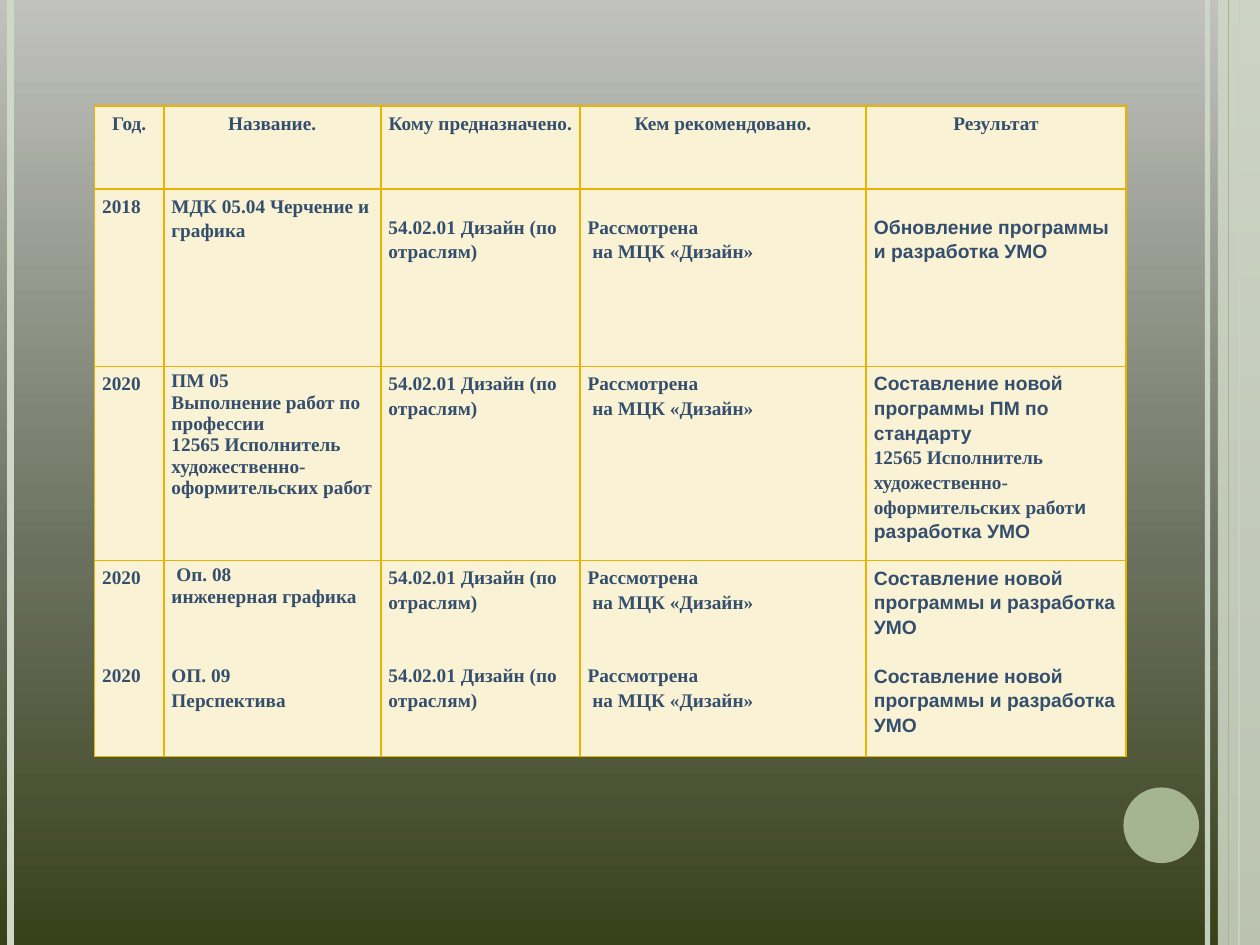
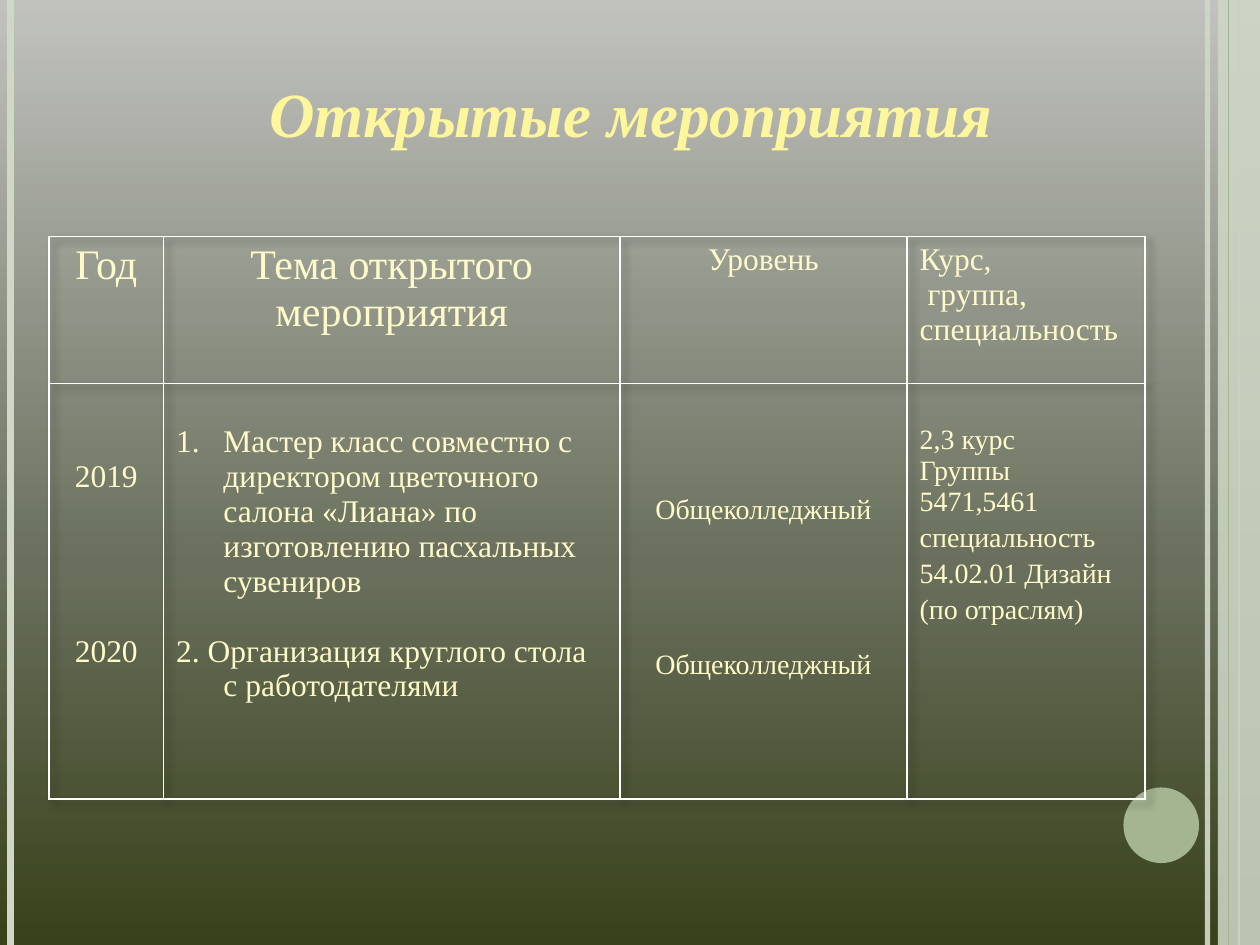
from dataclasses import dataclass, field
from typing import Optional

from lxml.etree import SubElement, fromstring
from pptx import Presentation
from pptx.dml.color import RGBColor
from pptx.enum.shapes import MSO_CONNECTOR, MSO_SHAPE
from pptx.enum.text import MSO_ANCHOR, PP_ALIGN
from pptx.oxml.ns import nsdecls, qn
from pptx.util import Pt


# Theme: colours, fonts and type sizes
@dataclass(frozen=True)
class Theme:
    serif: str = "Times New Roman"
    sans: str = "Arial"
    ramp: tuple = ((0, "38411A"), (40, "696F5C"), (100, "C1C2BE"))
    pale: str = "CFD7C7"
    sage: str = "A5B592"
    cream: str = "FAF2D4"
    gold: str = "E9B400"
    navy: str = "344E6D"
    white: str = "FFFFFF"
    lemon: str = "FDF69C"
    ivory: str = "FEFAC9"
    title: int = 36
    large: int = 24
    body: int = 18
    small: int = 16
    note: int = 11


THEME = Theme()
WIDE, HIGH = 720, 540
LOOSE = 1.15


# Text and table parts
@dataclass(frozen=True)
class Run:
    text: str
    font: str = THEME.serif
    size: int = THEME.note
    color: str = THEME.navy
    bold: bool = False
    slant: bool = False


@dataclass(frozen=True)
class Para:
    runs: tuple
    center: bool = False
    space: float = 1.0
    before: float = 0
    inset: float = 0
    hang: float = 0
    count: bool = False


@dataclass(frozen=True)
class Cell:
    paras: tuple
    drop: float = 0


@dataclass(frozen=True)
class Grid:
    left: float
    top: float
    cols: tuple
    rows: tuple
    cells: list
    pad: tuple
    edge: str
    fill: Optional[str] = None
    joined: set = field(default_factory=set)
    shade: bool = False


@dataclass(frozen=True)
class Rule:
    x: float
    width: float
    color: str
    alpha: int = 100


RULES = (Rule(690, 3, THEME.pale, 93), Rule(6, 4.5, THEME.pale),
         Rule(708, 1.5, THEME.sage))
SEAM = Rule(702, 0.75, THEME.sage)


def fade(owner, alpha: int) -> None:
    """Make the solid colours of a fill or line partly clear."""
    for color in owner.iter(qn("a:srgbClr")):
        SubElement(color, qn("a:alpha"), val=str(alpha * 1000))


def draw_rule(slide, rule: Rule) -> None:
    line = slide.shapes.add_connector(
        MSO_CONNECTOR.STRAIGHT, Pt(rule.x), Pt(0), Pt(rule.x), Pt(HIGH))
    line.line.width = Pt(rule.width)
    line.line.color.rgb = RGBColor.from_string(rule.color)
    props = line._element.spPr
    if rule.alpha < 100:
        fade(props, rule.alpha)
    SubElement(props, qn("a:effectLst"))


def draw_shape(slide, kind, box: tuple, color: str, alpha: int = 100) -> None:
    shape = slide.shapes.add_shape(kind, *map(Pt, box))
    shape.shadow.inherit = False
    shape.fill.solid()
    shape.fill.fore_color.rgb = RGBColor.from_string(color)
    shape.line.fill.background()
    if alpha < 100:
        fade(shape._element.spPr, alpha)


def draw_frame(slide) -> None:
    """Draw the side bands and the disc."""
    for rule in RULES:
        draw_rule(slide, rule)
    draw_shape(slide, MSO_SHAPE.RECTANGLE, (696, 0, 24, HIGH), THEME.pale, 87)
    draw_rule(slide, SEAM)
    draw_shape(slide, MSO_SHAPE.OVAL, (642, 450, 43.2, 43.2), THEME.sage)


def paint_back(master) -> None:
    fill = master.background.fill
    fill.gradient()
    fill.gradient_angle = 90
    stops = master.element.find(".//" + qn("a:gsLst"))
    for stop in list(stops):
        stops.remove(stop)
    for place, color in THEME.ramp:
        stop = SubElement(stops, qn("a:gs"), pos=str(place * 1000))
        SubElement(stop, qn("a:srgbClr"), val=color)


def write(frame, paras: tuple) -> None:
    for i, para in enumerate(paras):
        p = frame.paragraphs[0] if i == 0 else frame.add_paragraph()
        p.alignment = PP_ALIGN.CENTER if para.center else PP_ALIGN.LEFT
        p.line_spacing = para.space
        if para.before:
            p.space_before = Pt(para.before)
        props = p._p.get_or_add_pPr()
        props.set("marL", str(Pt(para.inset)))
        props.set("indent", str(Pt(-para.hang)))
        if para.count:
            SubElement(props, qn("a:buAutoNum"), type="arabicPeriod")
        for part in para.runs:
            run = p.add_run()
            run.text = part.text
            font = run.font
            font.name, font.size = part.font, Pt(part.size)
            font.bold, font.italic = part.bold, part.slant
            font.color.rgb = RGBColor.from_string(part.color)


def draw_edge(props, side: str, color: Optional[str]) -> None:
    line = SubElement(props, qn("a:ln" + side), w=str(Pt(1)))
    if color:
        SubElement(SubElement(line, qn("a:solidFill")),
                   qn("a:srgbClr"), val=color)
    else:
        SubElement(line, qn("a:noFill"))


def draw_grid(slide, grid: Grid) -> None:
    table = slide.shapes.add_table(
        len(grid.rows), len(grid.cols), Pt(grid.left), Pt(grid.top),
        Pt(sum(grid.cols)), Pt(sum(grid.rows))).table
    table.first_row = table.horz_banding = False
    for col, width in zip(table.columns, grid.cols):
        col.width = Pt(width)
    for row, height in zip(table.rows, grid.rows):
        row.height = Pt(height)
    if grid.shade:
        table._tbl.tblPr.insert(0, fromstring(
            f'<a:effectLst {nsdecls("a")}><a:outerShdw blurRad="{Pt(4)}" '
            f'dist="{Pt(4)}" dir="2700000" algn="tl"><a:srgbClr val="000000">'
            '<a:alpha val="40000"/></a:srgbClr></a:outerShdw></a:effectLst>'))
    side, top = grid.pad
    for r, row in enumerate(grid.cells):
        for c, item in enumerate(row):
            cell = table.cell(r, c)
            cell.margin_left = cell.margin_right = Pt(side)
            cell.margin_top, cell.margin_bottom = Pt(top + item.drop), Pt(top)
            # A joined row has no line between it and the next
            props = cell._tc.get_or_add_tcPr()
            draw_edge(props, "L", grid.edge)
            draw_edge(props, "R", grid.edge)
            draw_edge(props, "T", None if r - 1 in grid.joined else grid.edge)
            draw_edge(props, "B", None if r in grid.joined else grid.edge)
            if grid.fill:
                cell.fill.solid()
                cell.fill.fore_color.rgb = RGBColor.from_string(grid.fill)
            else:
                cell.fill.background()
            write(cell.text_frame, item.paras)


# Short forms for the programme table
def bold(text: str, font: str = THEME.serif) -> Run:
    return Run(text, font, bold=True)


def note(*lines: str, font: str = THEME.serif, space: float = LOOSE,
         center: bool = False, drop: float = 0) -> Cell:
    return Cell(tuple(Para((bold(line, font),), center, space)
                      for line in lines), drop)


def field_cell(drop: float = 0) -> Cell:
    return note("54.02.01 Дизайн (по отраслям)", drop=drop)


def board_cell(drop: float = 0) -> Cell:
    return Cell((Para((bold("Рассмотрена"),), space=LOOSE),
                 Para((bold("на МЦК «Дизайн»"),), space=LOOSE, inset=2.75)),
                drop)


def plan_row(year: str, name: Cell, result: Cell, drop: float = 0) -> list:
    return [note(year), name, field_cell(drop), board_cell(drop), result]


# Short form for the events table
def line(text: str, size: int = THEME.body, **style) -> Para:
    return Para((Run(text, size=size, color=THEME.ivory),), **style)


def build_plans(slide) -> None:
    draw_frame(slide)
    heads = ("Год.", "Название.", "Кому предназначено.",
             "Кем рекомендовано.", "Результат")
    craft = "12565 Исполнитель художественно-оформительских работ"
    fresh = note("Составление новой программы и разработка УМО",
                 font=THEME.sans)
    mixed = Cell((
        Para((bold("Составление новой программы ПМ по стандарту", THEME.sans),),
             space=LOOSE),
        Para((bold(craft), bold("и разработка УМО", THEME.sans)),
             space=LOOSE)))
    skip = 12
    draw_grid(slide, Grid(
        left=54, top=60.5, cols=(39.6, 124, 113.8, 163.6, 148.4),
        rows=(47.5, 101.5, 111, 56, 56), pad=(4.4, 2.2),
        edge=THEME.gold, fill=THEME.cream, joined={3},
        cells=[
            [note(head, center=True) for head in heads],
            plan_row("2018", note("МДК 05.04 Черчение и графика"),
                     note("Обновление программы", "и разработка УМО",
                          font=THEME.sans, drop=skip), skip),
            plan_row("2020", note("ПМ 05", "Выполнение работ по профессии",
                                  craft, space=1.0), mixed),
            plan_row("2020", Cell((Para((bold("Оп. 08"),), inset=2.75),
                                   Para((bold("инженерная графика"),)))),
                     fresh),
            plan_row("2020", note("ОП. 09", "Перспектива"), fresh),
        ]))


def build_events(slide) -> None:
    draw_frame(slide)
    # Title
    box = slide.shapes.add_textbox(Pt(36.5), Pt(37.5), Pt(648), Pt(53.5))
    frame = box.text_frame
    frame.word_wrap = True
    frame.vertical_anchor = MSO_ANCHOR.MIDDLE
    write(frame, (Para((Run("Открытые мероприятия", size=THEME.title,
                            color=THEME.lemon, bold=True, slant=True),),
                       center=True),))
    # Events; one skipped line of body text is a step
    step, small = 20, THEME.small
    heads = [Cell((line(text, size, center=True),)) for text, size in (
        ("Год", THEME.large), ("Тема открытого мероприятия", THEME.large),
        ("Уровень", THEME.body))]
    heads.append(Cell((line("Курс,"), line("группа,", inset=4.5),
                       line("специальность"))))
    level = "Общеколледжный"
    years = Cell((line("2019", center=True),
                  line("2020", center=True, before=4 * step)), 2 * step)
    themes = Cell((
        line("Мастер класс совместно с директором цветочного салона «Лиана» "
             "по изготовлению пасхальных сувениров",
             inset=27, hang=27, count=True),
        line("2. Организация круглого стола с работодателями",
             inset=27, hang=27, before=step)), step)
    levels = Cell((line(level, small, center=True),
                   line(level, small, center=True, before=71)), 3 * step)
    groups = Cell(
        tuple(line(text, small) for text in
              ("2,3 курс", "Группы", "5471,5461"))
        + tuple(line(text, small, space=LOOSE) for text in
                ("специальность", "54.02.01 Дизайн", "(по отраслям)")), step)
    draw_grid(slide, Grid(
        left=28, top=135, cols=(65.5, 260.7, 164.2, 136), rows=(84, 237.6),
        pad=(7.2, 3.6), edge=THEME.white, shade=True,
        cells=[heads, [years, themes, levels, groups]]))


def main() -> None:
    deck = Presentation()
    deck.slide_width, deck.slide_height = Pt(WIDE), Pt(HIGH)
    paint_back(deck.slide_master)
    for build in (build_plans, build_events):
        build(deck.slides.add_slide(deck.slide_layouts[6]))
    deck.save("out.pptx")


if __name__ == "__main__":
    main()
